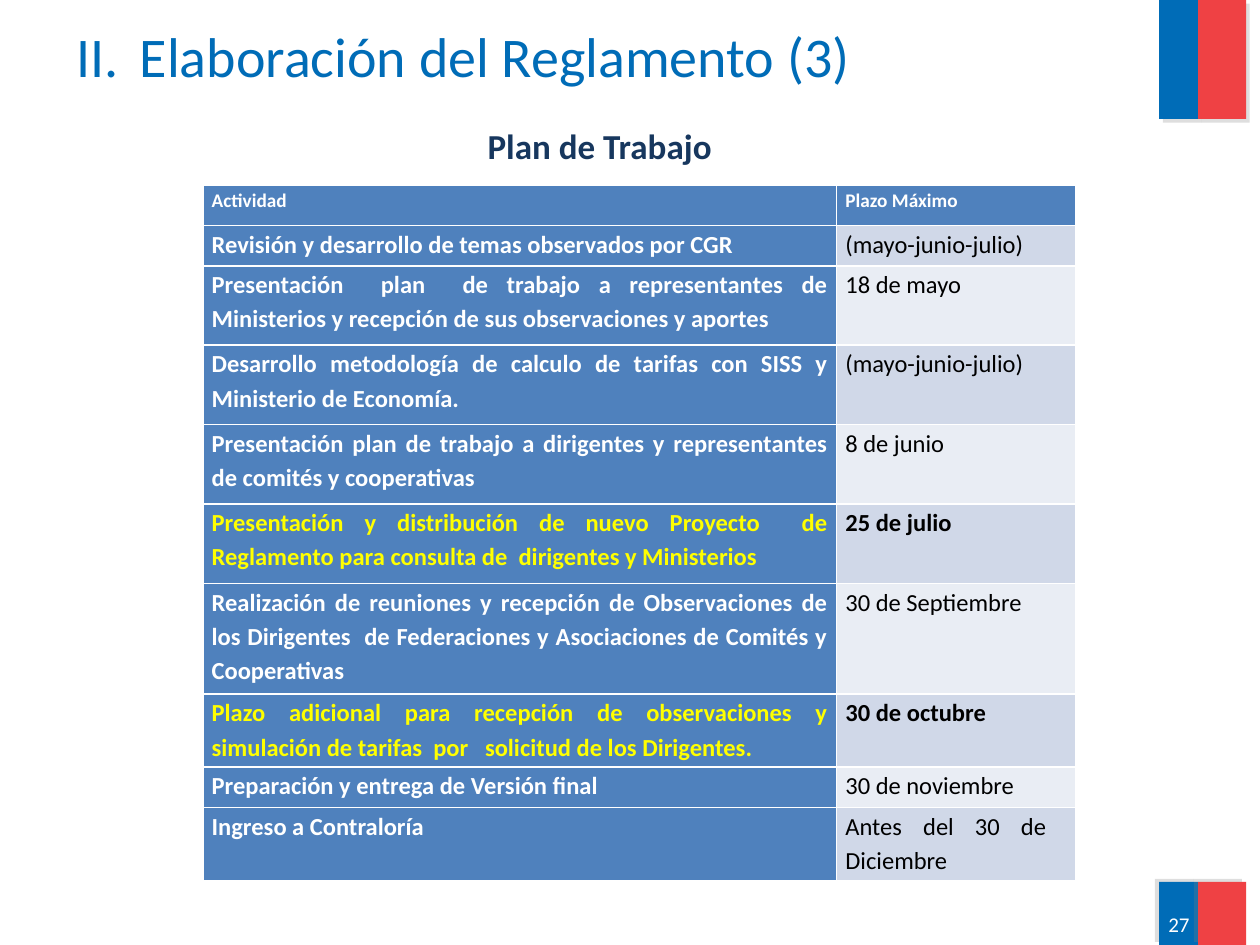
"""Builds the work plan slide: title, subtitle, schedule table and flag strips."""
from lxml import etree
from pptx import Presentation
from pptx.dml.color import RGBColor
from pptx.enum.shapes import MSO_SHAPE
from pptx.enum.text import MSO_ANCHOR, MSO_AUTO_SIZE, PP_ALIGN
from pptx.oxml.ns import qn
from pptx.util import Inches, Pt

RECT = MSO_SHAPE.RECTANGLE
MIDDLE, TOP = MSO_ANCHOR.MIDDLE, MSO_ANCHOR.TOP
NO_FIT = MSO_AUTO_SIZE.NONE
LEFT, CENTER, RIGHT, JUSTIFY = PP_ALIGN.LEFT, PP_ALIGN.CENTER, PP_ALIGN.RIGHT, PP_ALIGN.JUSTIFY

BLUE = RGBColor(0x00, 0x6C, 0xB7)
RED = RGBColor(0xEF, 0x41, 0x44)
NAVY = RGBColor(0x17, 0x37, 0x5E)
STEEL = RGBColor(0x4F, 0x81, 0xBD)
BANDS = RGBColor(0xE9, 0xED, 0xF4), RGBColor(0xD0, 0xD8, 0xE8)
WHITE = RGBColor(0xFF, 0xFF, 0xFF)
YELLOW = RGBColor(0xFF, 0xFF, 0x00)
BLACK = RGBColor(0x00, 0x00, 0x00)

prs = Presentation()
prs.slide_width, prs.slide_height = Inches(10), Inches(7.5)
s = prs.slides.add_slide(prs.slide_layouts[0])


def share(x, y, w, h):
    """Turn percentages of the slide into left, top, width and height."""
    px, py = prs.slide_width / 100, prs.slide_height / 100
    return int(x * px), int(y * py), int(w * px), int(h * py)


def write(tf, text, size, color, bold, align, anchor):
    """Fill a text frame with one formatted paragraph."""
    tf.word_wrap, tf.vertical_anchor = True, anchor
    p = tf.paragraphs[0]
    p.alignment = align
    r = p.add_run()
    r.text = text
    r.font.color.rgb = color
    for key, value in {"name": "Calibri", "size": Pt(size), "bold": bold}.items():
        setattr(r.font, key, value)
    return p


for y, h, angle in [(0, 12.6, 45), (93.33, 6.67, 215)]:
    for x, w, color in [(92, 3.1, BLUE), (95.1, 3.8, RED)]:
        sp = s.shapes.add_shape(RECT, *share(x, y, w, h))
        sp.fill.solid()
        sp.fill.fore_color.rgb = color
        sp.line.fill.background()
        sp.shadow.inherit = False
        effects = sp._element.spPr.find(qn("a:effectLst"))
        shadow = etree.SubElement(effects, qn("a:outerShdw"), dist=str(Pt(3)),
                                  dir=str(angle * 60000), algn="tl", rotWithShape="0")
        tint = etree.SubElement(shadow, qn("a:srgbClr"), val="808080")
        etree.SubElement(tint, qn("a:alpha"), val="25000")

title, subtitle = s.placeholders
number = s.shapes.add_textbox(0, 0, 0, 0)
for sp, box, text, size, color, bold, align in [
    (title, (5.1, -0.4, 85, 12.53), "II.\tElaboración del Reglamento (3)", 32, BLUE, False, LEFT),
    (subtitle, (5.1, 12.27, 85, 6.27), "Plan de Trabajo", 20, NAVY, True, CENTER),
    (number, (90.2, 95.07, 5.2, 5.33), "27", 12, WHITE, False, RIGHT),
]:
    sp.left, sp.top, sp.width, sp.height = share(*box)
    sp.text_frame.auto_size = NO_FIT
    write(sp.text_frame, text, size, color, bold, align, MIDDLE)

plan = [
    ("Actividad", "Plazo Máximo", 0.32, False),
    ("Revisión y desarrollo de temas observados por CGR", "(mayo-junio-julio)", 0.32, False),
    ("Presentación  plan  de trabajo a representantes de Ministerios y recepción de sus "
     "observaciones y aportes", "18 de mayo", 0.63, False),
    ("Desarrollo metodología de calculo de tarifas con SISS y Ministerio de Economía.",
     "(mayo-junio-julio)", 0.63, False),
    ("Presentación plan de trabajo a dirigentes y representantes de comités y cooperativas ",
     "8 de junio", 0.63, False),
    ("Presentación y distribución de nuevo Proyecto  de Reglamento para consulta de  "
     "dirigentes y Ministerios ", "25 de julio", 0.63, True),
    ("Realización de reuniones y recepción de Observaciones de los Dirigentes  de "
     "Federaciones y Asociaciones de Comités y Cooperativas", "30 de Septiembre", 0.88, False),
    ("Plazo adicional para recepción de observaciones y simulación de tarifas  por   "
     "solicitud de los Dirigentes.", "30 de octubre", 0.58, True),
    ("Preparación y entrega de Versión final ", "30 de noviembre", 0.32, False),
    ("Ingreso a Contraloría", "Antes del 30 de  Diciembre", 0.58, False),
]
table = s.shapes.add_table(len(plan), 2, *share(16.1, 19.6, 69.3, 73.5)).table
table.first_col = True
for column, width in zip(table.columns, (5.03, 1.9)):
    column.width = Inches(width)

for i, (activity, deadline, height, key_date) in enumerate(plan):
    table.rows[i].height = Inches(height)
    size = 14 if i else 11
    for j, text in enumerate((activity, deadline)):
        heading = i == 0 or j == 0
        cell = table.cell(i, j)
        cell.fill.solid()
        cell.fill.fore_color.rgb = STEEL if heading else BANDS[i % 2]
        margins = {"margin_left": 0.07, "margin_top": 0, "margin_right": 0.07, "margin_bottom": 0}
        for name, value in margins.items():
            setattr(cell, name, Inches(value))
        color = BLACK if not heading else YELLOW if key_date else WHITE
        p = write(cell.text_frame, text, size, color, heading or key_date, JUSTIFY, TOP)
        p.line_spacing, p.space_before = 1.15, Pt(6)

prs.save("out.pptx")
